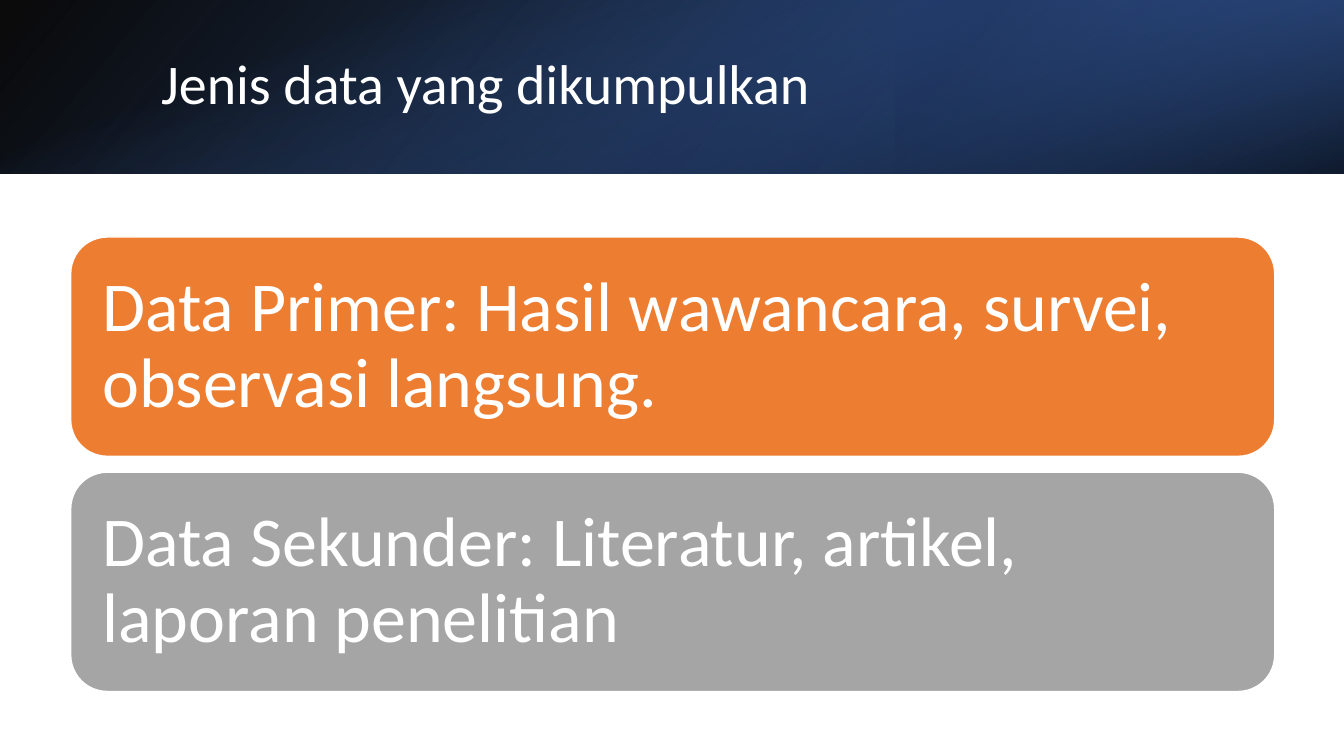
from lxml.etree import SubElement
from pptx import Presentation
from pptx.dml.color import RGBColor
from pptx.enum.shapes import MSO_SHAPE
from pptx.enum.text import MSO_ANCHOR, PP_ALIGN
from pptx.oxml.ns import qn
from pptx.util import Pt

WIDE, HIGH, BAND = 960, 540, 124
TITLE = "Jenis data yang dikumpulkan"
CARDS = [
    ("Data Primer: Hasil wawancara, survei, observasi langsung.", "ED7D31"),
    ("Data Sekunder: Literatur, artikel, laporan penelitian", "A5A5A5"),
]
# box, rotation, mirrored, angle, stops (position %, colour, opacity %)
LAYERS = [
    ((0, 0, WIDE, BAND), 0, True, 140,
     [(0, "000000", 96), (100, "2F5597", 100)]),
    ((640, 0, 320, BAND), 180, True, 320,
     [(19, "203864", 68), (100, "4472C4", 79)]),
    (((WIDE - BAND) / 2, (BAND - WIDE) / 2, BAND, WIDE), 90, False, 340,
     [(23, "4472C4", 0), (99, "000000", 74)]),
]
LEFT, TOP, WIDTH, HEIGHT, STEP = 50.5, 169.3, 860, 156.6, 168


def color(code):
    return RGBColor.from_string(code)


def place(kind, box):
    shape = slide.shapes.add_shape(kind, *map(Pt, box))
    shape.shadow.inherit = False
    return shape


def shade(shape, angle, stops):
    """Fill a shape with a linear gradient whose stops may be transparent."""
    shape.fill.gradient()
    grad = shape._element.spPr.find(qn("a:gradFill"))
    for child in list(grad):
        grad.remove(child)
    grad.set("rotWithShape", "1")
    group = SubElement(grad, qn("a:gsLst"))
    for pos, code, alpha in stops:
        stop = SubElement(group, qn("a:gs"), pos=str(pos * 1000))
        tint = SubElement(stop, qn("a:srgbClr"), val=code)
        SubElement(tint, qn("a:alpha"), val=str(alpha * 1000))
    SubElement(grad, qn("a:lin"), ang=str(angle * 60000), scaled="0")


def write(shape, text, size, inset):
    frame = shape.text_frame
    frame.word_wrap = True
    frame.vertical_anchor = MSO_ANCHOR.MIDDLE
    frame.margin_left = frame.margin_right = Pt(inset)
    para = frame.paragraphs[0]
    para.text = text
    para.alignment = PP_ALIGN.LEFT
    para.line_spacing = 0.9
    para.font.name = "Calibri"
    para.font.size = Pt(size)
    para.font.color.rgb = color("FFFFFF")


deck = Presentation()
deck.slide_width, deck.slide_height = Pt(WIDE), Pt(HIGH)
slide = deck.slides.add_slide(deck.slide_layouts[6])

for box, turn, mirror, angle, stops in LAYERS:
    layer = place(MSO_SHAPE.RECTANGLE, box)
    layer.rotation = turn
    if mirror:
        layer._element.spPr.xfrm.set("flipH", "1")
    layer.line.fill.background()
    shade(layer, angle, stops)

title = slide.shapes.add_textbox(Pt(108), Pt(27.4), Pt(790), Pt(69))
write(title, TITLE, 40, 7.2)

for row, (text, fill) in enumerate(CARDS):
    card = place(MSO_SHAPE.ROUNDED_RECTANGLE,
                 (LEFT, TOP + row * STEP, WIDTH, HEIGHT))
    card.fill.solid()
    card.fill.fore_color.rgb = color(fill)
    card.line.color.rgb = color("FFFFFF")
    card.line.width = Pt(1)
    write(card, text, 50, 15)

deck.save("out.pptx")
